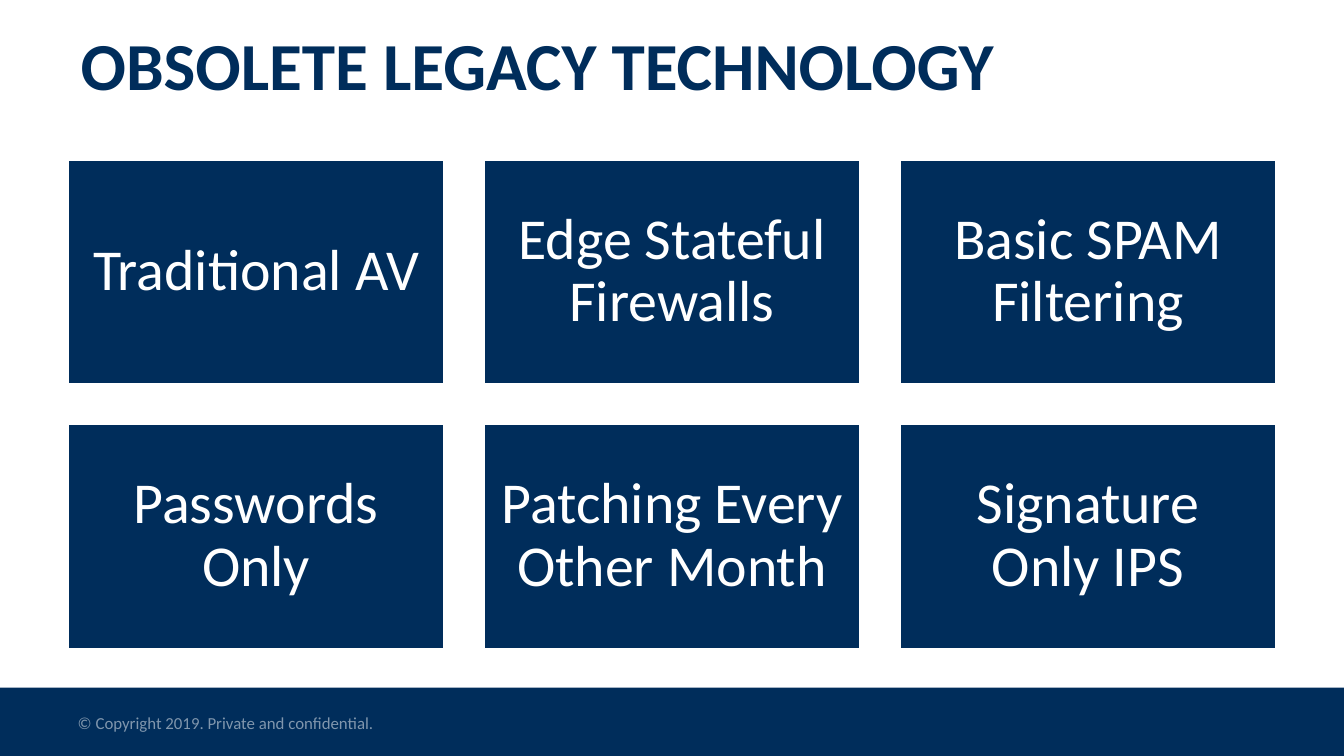
from pptx import Presentation
from pptx.dml.color import RGBColor
from pptx.enum.shapes import MSO_SHAPE
from pptx.enum.text import MSO_ANCHOR, PP_ALIGN
from pptx.util import Cm, Pt

COLORS = {"navy": "002D5B", "white": "FFFFFF", "muted": "8096AD"}
TOPICS = [
    "Traditional AV", "Edge Stateful Firewalls", "Basic SPAM Filtering",
    "Passwords Only", "Patching Every Other Month", "Signature Only IPS",
]
COLUMNS = 3
LEFT, TOP = 1.27, 3.0
CARD_WIDTH, CARD_HEIGHT, GAP = 7.14, 4.28, 0.72


def add_block(page, left, top, width, height):
    block = page.shapes.add_shape(
        MSO_SHAPE.RECTANGLE, Cm(left), Cm(top), Cm(width), Cm(height))
    block.shadow.inherit = False
    block.fill.solid()
    block.fill.fore_color.rgb = RGBColor.from_string(COLORS["navy"])
    block.line.fill.background()
    return block


def style_text(box, size, color, align, bold=False, spacing=1.0):
    frame = box.text_frame
    frame.word_wrap = True
    frame.vertical_anchor = MSO_ANCHOR.MIDDLE
    for para in frame.paragraphs:
        para.alignment = align
        para.line_spacing = spacing
        for span in para.runs:
            span.font.name = "Calibri"
            span.font.size = Pt(size)
            span.font.bold = bold
            span.font.color.rgb = RGBColor.from_string(COLORS[color])


deck = Presentation()
deck.slide_width, deck.slide_height = Cm(25.4), Cm(14.29)
page = deck.slides.add_slide(deck.slide_layouts[5])

add_block(page, 0, 13, 25.4, 1.29)

footer = page.shapes.add_textbox(Cm(1.22), Cm(13.34), Cm(8.59), Cm(0.64))
footer.text_frame.text = "© Copyright 2019. Private and confidential."
style_text(footer, 9, "muted", PP_ALIGN.LEFT)

for index, topic in enumerate(TOPICS):
    row, column = divmod(index, COLUMNS)
    card = add_block(
        page,
        LEFT + column * (CARD_WIDTH + GAP),
        TOP + row * (CARD_HEIGHT + GAP),
        CARD_WIDTH, CARD_HEIGHT)
    card.line.color.rgb = RGBColor.from_string(COLORS["white"])
    card.line.width = Pt(2)
    frame = card.text_frame
    frame.margin_left = frame.margin_right = Cm(0.33)
    frame.margin_top = frame.margin_bottom = Cm(0.33)
    frame.text = topic
    style_text(card, 31, "white", PP_ALIGN.CENTER, spacing=0.9)

title = page.shapes.title
title.left, title.top, title.width, title.height = Cm(1.27), Cm(0.38), Cm(22.86), Cm(1.93)
title.text_frame.text = "OBSOLETE LEGACY TECHNOLOGY"
style_text(title, 36, "navy", PP_ALIGN.LEFT, bold=True, spacing=0.8)

deck.save("out.pptx")
